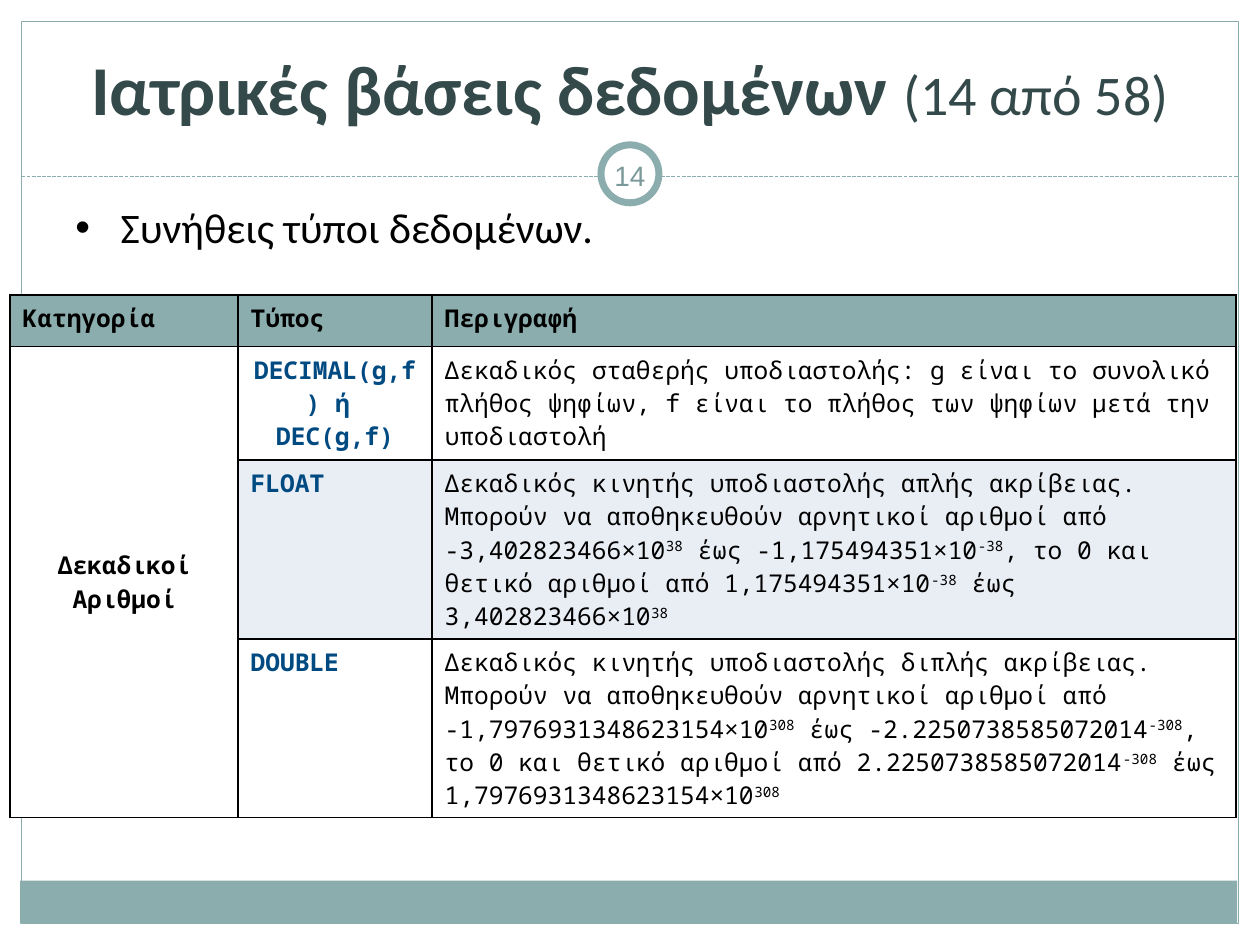
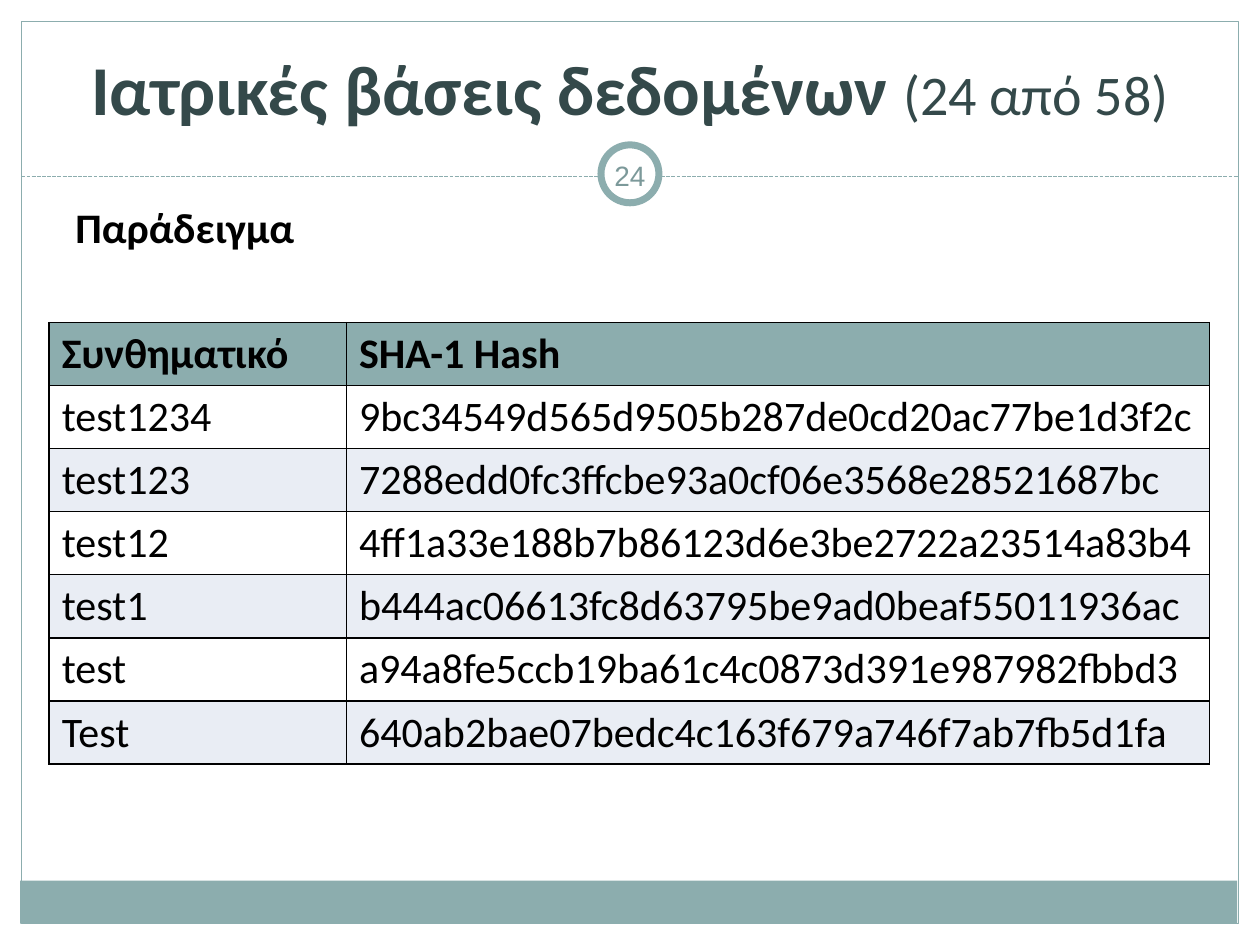
import pptx
import pptx.util
import pptx.dml.color
import pptx.enum.dml
import pptx.enum.shapes
import pptx.enum.text
import pptx.oxml
import pptx.oxml.ns
import lxml.etree

Inches = pptx.util.Inches
Pt = pptx.util.Pt
Shape = pptx.enum.shapes.MSO_SHAPE
Align = pptx.enum.text.PP_ALIGN
Anchor = pptx.enum.text.MSO_ANCHOR

COLORS = {
    "teal": "8CADAE", "dark": "34494A", "number": "7C999A", "blue": "004A82",
    "band": "E9EDF4", "white": "FFFFFF", "black": "000000",
}
TOTAL = 58


def rgb(name):
    return pptx.dml.color.RGBColor.from_string(COLORS[name])


def node(parent, tag, **attrs):
    child = lxml.etree.SubElement(parent, pptx.oxml.ns.qn(tag))
    for key, value in attrs.items():
        child.set(key, str(value))
    return child


class Deck:
    text = {"name": "Calibri", "size": 24, "bold": False, "color": "black"}

    def __init__(self):
        self.prs = pptx.Presentation()
        self.prs.slide_width, self.prs.slide_height = Inches(10), Inches(7.5)
        self.slide = None

    def page(self, number):
        """Add a slide with the shared frame, page number and title."""
        self.slide = self.prs.slides.add_slide(self.prs.slide_layouts[6])
        self.shape(Shape.RECTANGLE, (0.16, 6.99, 9.66, 0.34), fill="teal")
        self.shape(Shape.RECTANGLE, (0.17, 0.17, 9.66, 7.16), line=0.75)
        self.rule(0.17, 9.83, 1.4)
        self.shape(Shape.OVAL, (4.77, 1.15, 0.46, 0.46), fill="white", line=4)
        num = {"name": "Arial", "size": 16, "color": "number"}
        self.label((4.75, 1.15, 0.5, 0.48), [(str(number), num)],
                   Align.CENTER, Anchor.MIDDLE, 0.05)
        head = {"size": 40, "bold": True, "color": "dark"}
        tail = {"size": 32, "color": "dark"}
        self.label((0.5, 0.2, 9, 0.99),
                   [("Ιατρικές βάσεις δεδομένων ", head),
                    (f"({number} από {TOTAL})", tail)],
                   Align.CENTER, Anchor.MIDDLE)

    def shape(self, kind, box, fill=None, line=None):
        item = self.slide.shapes.add_shape(kind, *map(Inches, box))
        item.shadow.inherit = False
        if fill:
            item.fill.solid()
            item.fill.fore_color.rgb = rgb(fill)
        else:
            item.fill.background()
        if line:
            item.line.color.rgb = rgb("teal")
            item.line.width = Pt(line)
        else:
            item.line.fill.background()

    def rule(self, left, right, top):
        """Draw the dashed line under the title."""
        item = self.slide.shapes.add_connector(
            pptx.enum.shapes.MSO_CONNECTOR.STRAIGHT,
            Inches(left), Inches(top), Inches(right), Inches(top))
        item.line.color.rgb = rgb("teal")
        item.line.width = Pt(0.75)
        item.line.dash_style = pptx.enum.dml.MSO_LINE.SQUARE_DOT
        node(item._element.spPr, "a:effectLst")

    def run(self, para, words, style):
        """Add words; parts between carets are raised."""
        values = {**self.text, **style}
        values["size"] = Pt(values["size"])
        color = values.pop("color")
        for spot, part in enumerate(words.split("^")):
            if not part:
                continue
            run = para.add_run()
            run.text = part
            for key, value in values.items():
                setattr(run.font, key, value)
            run.font.color.rgb = rgb(color)
            if spot % 2:
                run._r.get_or_add_rPr().set("baseline", "30000")

    def label(self, box, runs, align=Align.LEFT, anchor=Anchor.TOP,
              inset=None, bullet=False):
        frame = self.slide.shapes.add_textbox(*map(Inches, box)).text_frame
        frame.word_wrap = True
        frame.vertical_anchor = anchor
        if inset:
            for side in ("left", "right", "top", "bottom"):
                setattr(frame, f"margin_{side}", Inches(inset))
        para = frame.paragraphs[0]
        para.alignment = align
        if bullet:
            props = para._p.get_or_add_pPr()
            props.set("marL", str(Inches(0.36)))
            props.set("indent", str(Inches(-0.38)))
            node(props, "a:buFont", typeface="Arial")
            node(props, "a:buChar", char="•")
        for words, style in runs:
            self.run(para, words, style)

    def border(self, cell):
        props = cell._tc.get_or_add_tcPr()
        for spot, side in enumerate(("lnL", "lnR", "lnT", "lnB")):
            line = node(props, f"a:{side}", w=Pt(1))
            fill = node(line, "a:solidFill")
            node(fill, "a:srgbClr", val=COLORS["black"])
            props.insert(spot, line)

    def cell(self, cell, words, style, fill, centre=False):
        cell.fill.solid()
        cell.fill.fore_color.rgb = rgb(fill)
        self.border(cell)
        frame = cell.text_frame
        for spot, line in enumerate(words.split("\n")):
            para = frame.add_paragraph() if spot else frame.paragraphs[0]
            para.alignment = Align.CENTER if centre else Align.LEFT
            self.run(para, line, style)

    def table(self, spot, widths, heights, rows, styles, centred=()):
        """Fill a banded grid; styles holds one text style per column."""
        box = (*spot, sum(widths), sum(heights))
        grid = self.slide.shapes.add_table(
            len(rows), len(widths), *map(Inches, box)).table
        grid.first_row = grid.horz_banding = False
        for col, width in zip(grid.columns, widths):
            col.width = Inches(width)
        for row, height in zip(grid.rows, heights):
            row.height = Inches(height)
        for r, row in enumerate(rows):
            fill = ("band", "white")[r % 2] if r else "teal"
            for c, words in enumerate(row):
                style = styles[c]
                if r == 0:
                    style = {**style, "bold": True, "color": "black"}
                self.cell(grid.cell(r, c), words, style, fill, (r, c) in centred)
        return grid


TYPES = [
    ("Κατηγορία", "Τύπος", "Περιγραφή"),
    ("Δεκαδικοί Αριθμοί", "DECIMAL(g,f) ή \nDEC(g,f)",
     "Δεκαδικός σταθερής υποδιαστολής: g είναι το συνολικό πλήθος ψηφίων, "
     "f είναι το πλήθος των ψηφίων μετά την υποδιαστολή"),
    ("", "FLOAT",
     "Δεκαδικός κινητής υποδιαστολής απλής ακρίβειας. Μπορούν να "
     "αποθηκευθούν αρνητικοί αριθμοί από -3,402823466×10^38^ έως "
     "-1,175494351×10^-38^, το 0 και θετικό αριθμοί από "
     "1,175494351×10^-38^ έως 3,402823466×10^38^"),
    ("", "DOUBLE",
     "Δεκαδικός κινητής υποδιαστολής διπλής ακρίβειας. Μπορούν να "
     "αποθηκευθούν αρνητικοί αριθμοί από\n"
     "-1,7976931348623154×10^308^ έως -2.2250738585072014^-308^, το 0 και "
     "θετικό αριθμοί από 2.2250738585072014^-308^ έως "
     "1,7976931348623154×10^308^"),
]
HASHES = [
    ("Συνθηματικό", "SHA-1 Hash"),
    ("test1234", "9bc34549d565d9505b287de0cd20ac77be1d3f2c"),
    ("test123", "7288edd0fc3ffcbe93a0cf06e3568e28521687bc"),
    ("test12", "4ff1a33e188b7b86123d6e3be2722a23514a83b4"),
    ("test1", "b444ac06613fc8d63795be9ad0beaf55011936ac"),
    ("test", "a94a8fe5ccb19ba61c4c0873d391e987982fbbd3"),
    ("Test", "640ab2bae07bedc4c163f679a746f7ab7fb5d1fa"),
]


def types(deck):
    deck.page(14)
    deck.label((0.5, 1.55, 9, 5.35), [("Συνήθεις τύποι δεδομένων.", {})],
               bullet=True)
    mono = {"name": "Noto Sans Mono", "size": 14}
    bold = {**mono, "bold": True}
    grid = deck.table((0.08, 2.34), (1.81, 1.54, 6.38), (0.41, 0.9, 1.42, 1.42),
                      TYPES, (bold, {**bold, "color": "blue"}, mono),
                      centred={(1, 0), (1, 1)})
    group = grid.cell(1, 0)
    group.merge(grid.cell(3, 0))
    group.vertical_anchor = Anchor.MIDDLE


def hashes(deck):
    deck.page(24)
    deck.label((0.5, 1.55, 9, 0.71), [("Παράδειγμα", {"bold": True})])
    deck.table((0.39, 2.56), (2.36, 6.85), [0.5] * len(HASHES), HASHES, ({}, {}))


def main():
    deck = Deck()
    types(deck)
    hashes(deck)
    deck.prs.save("out.pptx")


if __name__ == "__main__":
    main()
